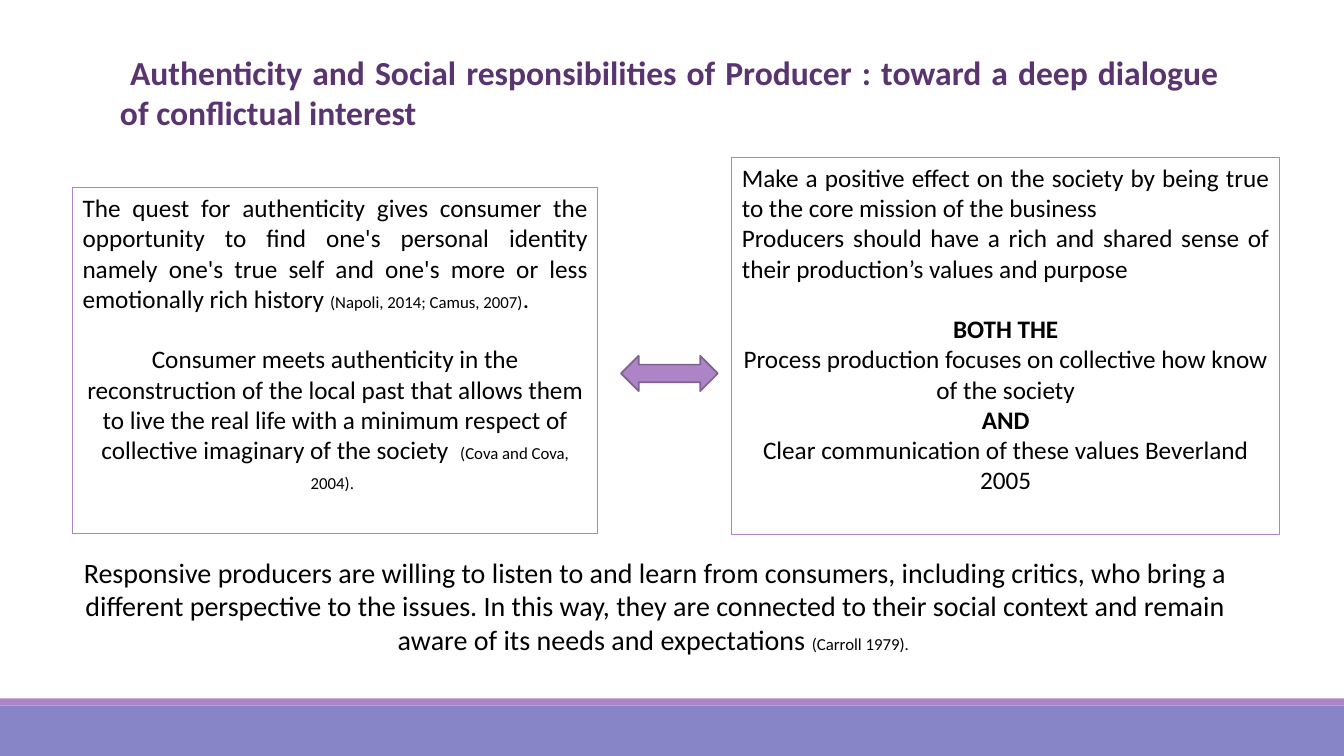
from dataclasses import dataclass

import pptx
import pptx.dml.color
import pptx.enum.shapes
import pptx.enum.text
import pptx.util
from pptx.util import Inches

ALIGN = pptx.enum.text.PP_ALIGN
SHAPE = pptx.enum.shapes.MSO_SHAPE


@dataclass(frozen=True)
class Theme:
    font: str = "Calibri"
    text: str = "000000"
    heading: str = "5A3471"
    accent: str = "AD84C6"
    arrow_edge: str = "806292"
    footer: str = "8784C7"
    title_size: float = 24
    summary_size: float = 20
    body_size: float = 18
    citation_size: float = 12
    blank_line: float = 21.6


THEME = Theme()


@dataclass(frozen=True)
class Run:
    text: str
    size: float = THEME.body_size
    bold: bool = False
    color: str = THEME.text


@dataclass(frozen=True)
class Paragraph:
    runs: tuple[Run, ...]
    align: ALIGN = ALIGN.CENTER
    gap_before: float = 0


@dataclass(frozen=True)
class Area:
    left: float
    top: float
    width: float
    height: float

    def lengths(self) -> tuple:
        return tuple(map(Inches, (self.left, self.top, self.width, self.height)))


@dataclass(frozen=True)
class Panel:
    area: Area
    paragraphs: tuple[Paragraph, ...]


def rgb(code: str) -> pptx.dml.color.RGBColor:
    return pptx.dml.color.RGBColor.from_string(code)


def add_run(paragraph, text: str, *, size: float, bold: bool, color: str) -> None:
    run = paragraph.add_run()
    run.text = text
    run.font.name = THEME.font
    run.font.size = pptx.util.Pt(size)
    run.font.bold = bold
    run.font.color.rgb = rgb(color)


def write(frame, paragraphs: tuple[Paragraph, ...]) -> None:
    frame.word_wrap = True
    frame.auto_size = pptx.enum.text.MSO_AUTO_SIZE.NONE
    frame.vertical_anchor = pptx.enum.text.MSO_ANCHOR.TOP
    for index, content in enumerate(paragraphs):
        paragraph = frame.add_paragraph() if index else frame.paragraphs[0]
        paragraph.alignment = content.align
        paragraph.space_before = pptx.util.Pt(content.gap_before)
        for run in content.runs:
            add_run(paragraph, run.text, size=run.size, bold=run.bold, color=run.color)


def add_block(slide, area: Area, kind: SHAPE = SHAPE.RECTANGLE, *,
              fill: str = "", line: str = "", weight: float = 0.75):
    block = slide.shapes.add_shape(kind, *area.lengths())
    block.shadow.inherit = False
    if fill:
        block.fill.solid()
        block.fill.fore_color.rgb = rgb(fill)
    else:
        block.fill.background()
    if line:
        block.line.color.rgb = rgb(line)
        block.line.width = pptx.util.Pt(weight)
    else:
        block.line.fill.background()
    return block


TITLE_AREA = Area(1.09, 0.46, 11.1, 0.91)
TITLE = (Paragraph((Run(
    " Authenticity and Social responsibilities of Producer : toward a deep dialogue "
    "of conflictual interest ", THEME.title_size, True, THEME.heading),), ALIGN.JUSTIFY),)

PRODUCER = Panel(Area(7.26, 1.56, 5.43, 3.74), (
    Paragraph((Run("Make a positive effect on the society by being true to the core "
                   "mission of the business "),), ALIGN.JUSTIFY),
    Paragraph((Run("Producers should have a rich and shared sense of their "
                   "production’s values and purpose"),), ALIGN.JUSTIFY),
    Paragraph((Run("BOTH THE", bold=True),), gap_before=THEME.blank_line),
    Paragraph((Run("Process production focuses on collective how know of the society"),)),
    Paragraph((Run("AND", bold=True),)),
    Paragraph((Run("Clear communication of these values Beverland 2005"),)),
))

CONSUMER = Panel(Area(0.72, 1.86, 5.21, 3.43), (
    Paragraph((
        Run("The quest for authenticity gives consumer the opportunity to find one's "
            "personal identity namely one's true self and one's more or less "
            "emotionally rich history "),
        Run("(Napoli, 2014; Camus, 2007)", THEME.citation_size),
        Run(". "),
    ), ALIGN.JUSTIFY),
    Paragraph((
        Run("Consumer meets authenticity in the reconstruction of the local past that "
            "allows them to live the real life with a minimum respect of collective "
            "imaginary of the society  "),
        Run("(Cova and Cova, 2004).", THEME.citation_size),
        Run(" "),
    ), gap_before=THEME.blank_line),
))

SUMMARY = Panel(Area(0.72, 5.46, 11.56, 1.11), (
    Paragraph((
        Run("Responsive producers are willing to listen to and learn from consumers, "
            "including critics, who bring a different perspective to the issues. In this "
            "way, they are connected to their social context and remain aware of its "
            "needs and expectations ", THEME.summary_size),
        Run("(Carroll 1979). ", THEME.citation_size),
    )),
))


def main() -> None:
    deck = pptx.Presentation()
    deck.slide_width, deck.slide_height = Inches(13.33), Inches(7.5)
    slide = deck.slides.add_slide(deck.slide_layouts.get_by_name("Title Only"))

    # Footer bands
    add_block(slide, Area(0, 7, 13.33, 0.5), fill=THEME.footer)
    add_block(slide, Area(0, 6.93, 13.33, 0.07), fill=THEME.accent)

    # Title
    title = slide.shapes.title
    title.left, title.top, title.width, title.height = TITLE_AREA.lengths()
    write(title.text_frame, TITLE)

    # Producer and consumer panels, joined by an arrow
    for panel in (PRODUCER, CONSUMER):
        write(add_block(slide, panel.area, line=THEME.accent).text_frame, panel.paragraphs)
    add_block(slide, Area(6.16, 3.53, 0.96, 0.35), SHAPE.LEFT_RIGHT_ARROW,
              fill=THEME.accent, line=THEME.arrow_edge, weight=1.25)

    # Summary
    summary = slide.shapes.add_textbox(*SUMMARY.area.lengths())
    write(summary.text_frame, SUMMARY.paragraphs)

    deck.save("out.pptx")


if __name__ == "__main__":
    main()
